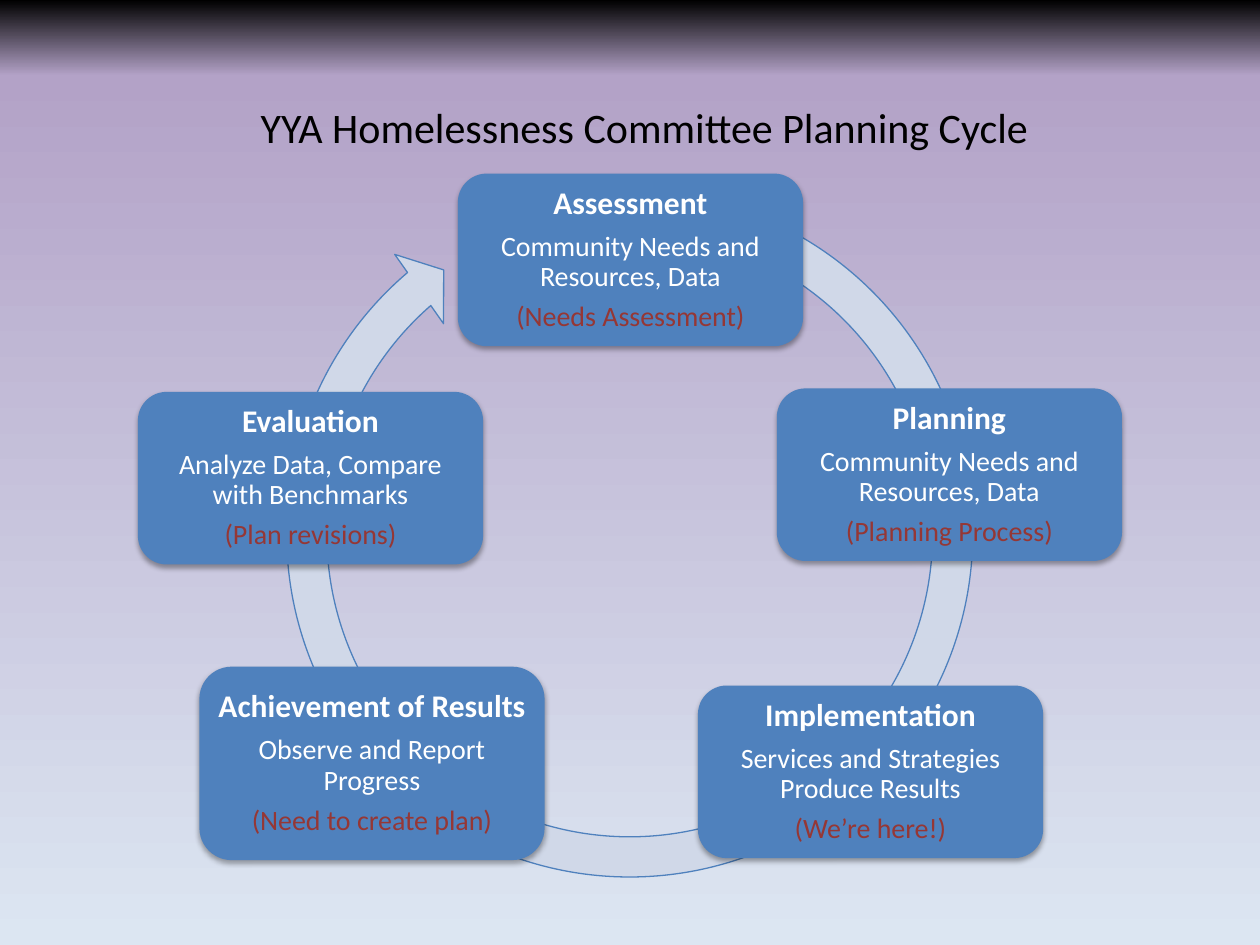
from copy import deepcopy

from lxml import etree
from pptx import Presentation
from pptx.dml.color import RGBColor
from pptx.enum.shapes import MSO_SHAPE
from pptx.enum.text import MSO_ANCHOR, MSO_AUTO_SIZE, PP_ALIGN
from pptx.oxml.ns import qn
from pptx.util import Cm, Pt

ROUND_RECT = MSO_SHAPE.ROUNDED_RECTANGLE
CIRCULAR_ARROW = MSO_SHAPE.CIRCULAR_ARROW
MIDDLE = MSO_ANCHOR.MIDDLE
GROW = MSO_AUTO_SIZE.SHAPE_TO_FIT_TEXT
LEFT, CENTER = PP_ALIGN.LEFT, PP_ALIGN.CENTER

COLORS = {
    "black": "000000",
    "purple": "B3A2C7",
    "pale": "DCE6F2",
    "blue": "4F81BD",
    "ring": "D0D8E8",
    "white": "FFFFFF",
    "red": "953735",
}
FONT = "Calibri"
BOX_W, BOX_H = 6.96, 3.48

# left, top, height, heading, description, status
STAGES = [
    (9.23, 3.5, BOX_H, "Assessment",
     "Community Needs and Resources, Data", "(Needs Assessment)"),
    (15.66, 7.83, BOX_H, "Planning",
     "Community Needs and Resources, Data", "(Planning Process)"),
    (14.07, 13.82, BOX_H, "Implementation",
     "Services and Strategies Produce Results", "(We’re here!)"),
    (4.02, 13.44, 3.9, "Achievement of Results",
     "Observe and Report Progress", "(Need to create plan)"),
    (2.78, 7.9, BOX_H, "Evaluation",
     "Analyze Data, Compare with Benchmarks", "(Plan revisions)"),
]


def rgb(name):
    return RGBColor.from_string(COLORS[name])


class CycleSlide:
    def __init__(self, prs):
        self.s = prs.slides.add_slide(prs.slide_layouts[5])

    def background(self, stops):
        """Fill the slide from top to bottom with (position, color) stops."""
        fill = self.s.background.fill
        fill.gradient()
        fill.gradient_angle = 270
        gs_list = self.s.element.find(".//" + qn("a:gsLst"))
        while len(gs_list) < len(stops):
            gs_list.append(deepcopy(gs_list[0]))
        for stop, (position, color) in zip(fill.gradient_stops, stops):
            stop.position = position
            stop.color.rgb = rgb(color)

    def format(self, p, size, color, bold=False, align=CENTER):
        p.alignment = align
        for r in p.runs:
            r.font.name = FONT
            r.font.size = Pt(size)
            r.font.bold = bold
            r.font.color.rgb = rgb(color)

    def title(self, text, left, top, width, height):
        sp = self.s.shapes.title
        sp.left, sp.top, sp.width, sp.height = map(Cm, (left, top, width, height))
        tf = sp.text_frame
        tf.text = text
        tf.auto_size = GROW
        self.format(tf.paragraphs[0], 24, "black", align=LEFT)

    def shape(self, kind, left, top, width, height, fill):
        sp = self.s.shapes.add_shape(kind, *map(Cm, (left, top, width, height)))
        sp.shadow.inherit = False
        sp.fill.solid()
        sp.fill.fore_color.rgb = rgb(fill)
        return sp

    def ring(self, left, top, size, adjustments):
        sp = self.shape(CIRCULAR_ARROW, left, top, size, size, "ring")
        sp.line.color.rgb = rgb("blue")
        sp.line.width = Pt(0.75)
        for i, value in enumerate(adjustments):
            sp.adjustments[i] = value

    def soft_shadow(self, sp):
        effects = sp.element.spPr.find(qn("a:effectLst"))
        shadow = etree.SubElement(
            effects, qn("a:outerShdw"), blurRad=str(Pt(3.1)),
            dist=str(Pt(1.8)), dir="5400000", rotWithShape="0")
        color = etree.SubElement(shadow, qn("a:srgbClr"), val=COLORS["black"])
        etree.SubElement(color, qn("a:alpha"), val="35000")

    def stage(self, left, top, height, heading, description, status):
        sp = self.shape(ROUND_RECT, left, top, BOX_W, height, "blue")
        sp.line.fill.background()
        self.soft_shadow(sp)
        tf = sp.text_frame
        tf.word_wrap = True
        tf.vertical_anchor = MIDDLE
        tf.margin_left = tf.margin_right = Cm(0.18)
        tf.margin_top = tf.margin_bottom = Cm(0.18)
        tf.text = "\n".join((heading, description, status))
        styles = [(18, "white", True), (16, "white", False), (16, "red", False)]
        for p, (size, color, bold) in zip(tf.paragraphs, styles):
            self.format(p, size, color, bold)
            p.line_spacing = 0.9
            p.space_after = Pt(0.35 * size)


def main():
    prs = Presentation()
    prs.slide_width, prs.slide_height = Cm(25.4), Cm(19.05)
    slide = CycleSlide(prs)

    # Background and title
    slide.background([(0, "black"), (0.08, "purple"), (1, "pale")])
    slide.title("YYA Homelessness Committee Planning Cycle", 5, 1.91, 16.03, 1.27)

    # Cycle arrow behind the stages
    slide.ring(5.33, 3.4, 14.73, (0.055, 3.31, 137.59, 173.96, 0.058))

    # Stages, clockwise from the top
    for stage in STAGES:
        slide.stage(*stage)

    prs.save("out.pptx")


if __name__ == "__main__":
    main()
